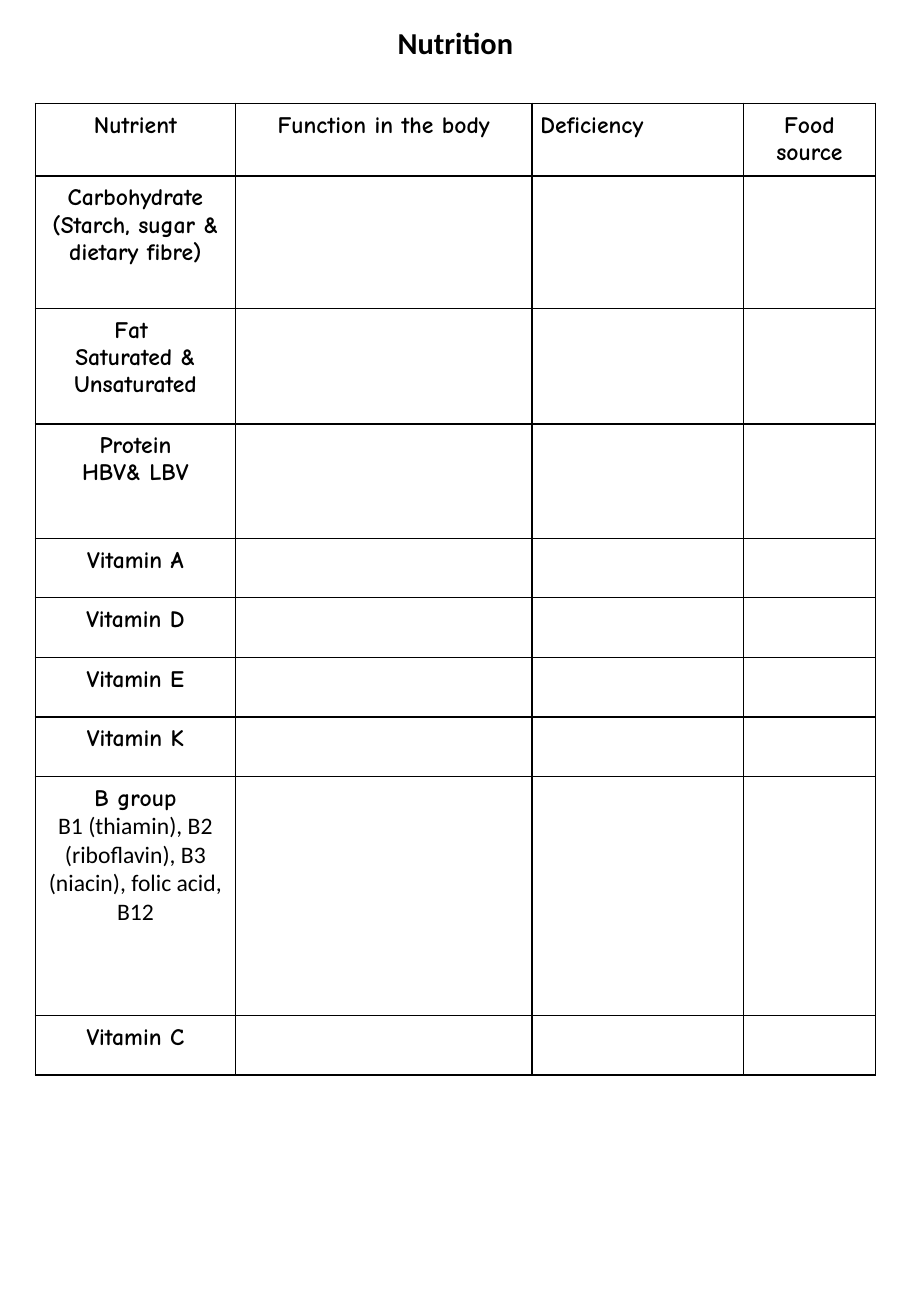
from dataclasses import dataclass

from lxml.etree import SubElement
from pptx import Presentation
from pptx.dml.color import RGBColor
from pptx.enum.text import MSO_AUTO_SIZE as AutoSize, PP_ALIGN as Align
from pptx.oxml.ns import qn
from pptx.util import Inches, Pt


@dataclass(frozen=True)
class Theme:
    ink: str = "000000"
    paper: str = "FFFFFF"
    table_font: str = "Comic Neue"
    plain_font: str = "Calibri"
    title_size: int = 18
    table_size: int = 14
    border_width: int = 1
    cell_margin: float = 0.07


HEADERS = ["Nutrient", "Function in the body", "Deficiency", "Food source"]
COLUMN_WIDTHS = [1.65, 2.44, 1.74, 1.09]
HEADER_HEIGHT = 0.6
VITAMIN_HEIGHT = 0.49
B_VITAMINS = "B1 (thiamin), B2 (riboflavin), B3 (niacin), folic acid, B12"
NUTRIENTS = [
    ("Carbohydrate\n(Starch, sugar & dietary fibre)", 1.09),
    ("Fat \nSaturated & Unsaturated", 0.95),
    ("Protein\nHBV& LBV", 0.94),
    *[(f"Vitamin {letter}", VITAMIN_HEIGHT) for letter in "ADEK"],
    (f"B group\n{B_VITAMINS}", 1.97),
    ("Vitamin C", VITAMIN_HEIGHT),
]


class Worksheet:
    def __init__(self, slide, theme):
        self.slide = slide
        self.theme = theme

    def format_paragraph(self, paragraph, size, font, bold=True, align=Align.CENTER):
        paragraph.alignment = align
        for run in paragraph.runs:
            run.font.size = Pt(size)
            run.font.name = font
            run.font.bold = bold
            run.font.color.rgb = RGBColor.from_string(self.theme.ink)

    def add_title(self, text, left, top, width, height):
        box = self.slide.shapes.add_textbox(
            Inches(left), Inches(top), Inches(width), Inches(height))
        frame = box.text_frame
        frame.text = text
        frame.word_wrap = False
        frame.auto_size = AutoSize.SHAPE_TO_FIT_TEXT
        self.format_paragraph(
            frame.paragraphs[0], self.theme.title_size, self.theme.plain_font)

    def style_cell(self, cell):
        """Set margins, borders and fill; the borders must precede the fill in the XML."""
        margin = Inches(self.theme.cell_margin)
        cell.margin_left = cell.margin_right = margin
        cell.margin_top = cell.margin_bottom = margin
        properties = cell._tc.get_or_add_tcPr()
        for side in ("lnL", "lnR", "lnT", "lnB"):
            line = SubElement(properties, qn(f"a:{side}"), w=str(Pt(self.theme.border_width)))
            fill = SubElement(line, qn("a:solidFill"))
            SubElement(fill, qn("a:srgbClr"), val=self.theme.ink)
        cell.fill.solid()
        cell.fill.fore_color.rgb = RGBColor.from_string(self.theme.paper)

    def write_cell(self, cell, text):
        cell.text_frame.text = text
        for paragraph in cell.text_frame.paragraphs:
            plain = paragraph.text == B_VITAMINS
            self.format_paragraph(
                paragraph,
                self.theme.table_size,
                self.theme.plain_font if plain else self.theme.table_font,
                bold=not plain,
                align=Align.LEFT if text == "Deficiency" else Align.CENTER)

    def add_table(self, rows, heights, widths, left, top):
        frame = self.slide.shapes.add_table(
            len(rows), len(widths), Inches(left), Inches(top),
            Inches(sum(widths)), Inches(sum(heights)))
        table = frame.table
        table.first_row = table.horz_banding = False
        for column, width in zip(table.columns, widths):
            column.width = Inches(width)
        for row, height, texts in zip(table.rows, heights, rows):
            row.height = Inches(height)
            for cell in row.cells:
                self.style_cell(cell)
            for cell, text in zip(row.cells, texts):
                self.write_cell(cell, text)


def main():
    presentation = Presentation()
    presentation.slide_width = Inches(7.5)
    presentation.slide_height = Inches(10.83)
    slide = presentation.slides.add_slide(presentation.slide_layouts[6])

    worksheet = Worksheet(slide, Theme())
    rows = [HEADERS] + [[name] for name, _ in NUTRIENTS]
    heights = [HEADER_HEIGHT] + [height for _, height in NUTRIENTS]
    worksheet.add_table(rows, heights, COLUMN_WIDTHS, left=0.29, top=0.85)
    worksheet.add_title("Nutrition", left=3.17, top=0.15, width=1.16, height=0.4)
    presentation.save("out.pptx")


if __name__ == "__main__":
    main()
